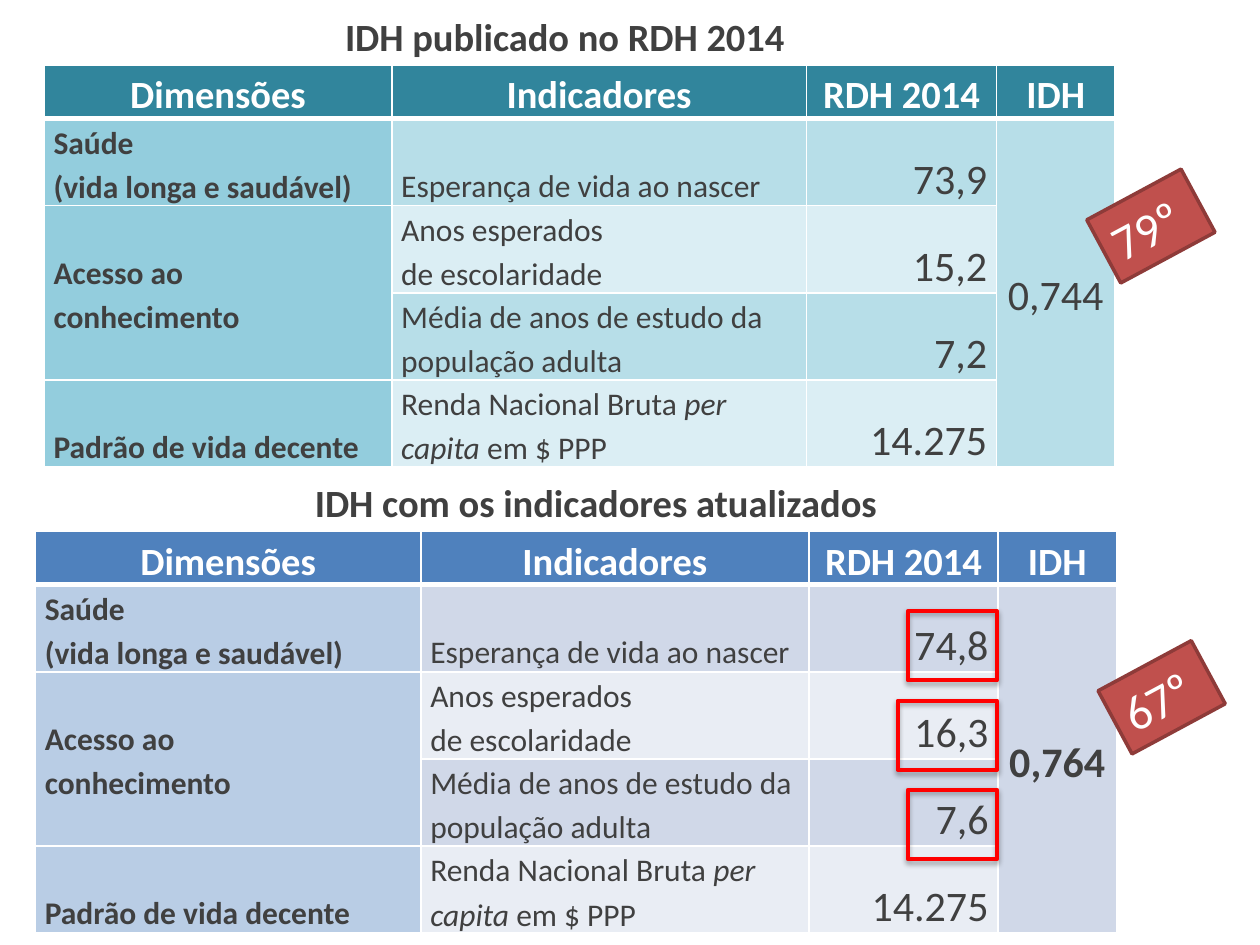
"""Build the slide comparing the published and the updated HDI tables."""
from lxml import etree
from pptx import Presentation
from pptx.dml.color import RGBColor
from pptx.enum import shapes, text
from pptx.oxml import ns
from pptx.util import Pt

WHITE = RGBColor(0xFF, 0xFF, 0xFF)
GREY = RGBColor(0x40, 0x40, 0x40)
RED = RGBColor(0xFF, 0x00, 0x00)
BRICK = RGBColor(0xC0, 0x50, 0x4D)
BRICK_DARK = RGBColor(0x8E, 0x3B, 0x39)
BLUES = [RGBColor.from_string(c) for c in ("4F81BD", "B9CDE5", "D0D8E8", "E9EDF4")]
TEALS = [RGBColor.from_string(c) for c in ("31859C", "93CDDD", "B7DEE8", "DBEEF4")]

FONT = "Calibri"
LEFT, CENTER, RIGHT = (text.PP_ALIGN.LEFT, text.PP_ALIGN.CENTER, text.PP_ALIGN.RIGHT)
HEADERS = ["Dimensões", "Indicadores", "RDH 2014", "IDH"]
DIMENSIONS = [
    ["Saúde", "(vida longa e saudável)"],
    ["Acesso ao", "conhecimento"],
    [],
    ["Padrão de vida decente"],
]
INDICATORS = [
    ["Esperança de vida ao nascer"],
    ["Anos esperados", "de escolaridade"],
    ["Média de anos de estudo da população adulta"],
    [("Renda Nacional Bruta ", "per capita ", "em $ PPP")],
]
TABLES = [
    dict(left=20.2, top=303.8, widths=(220.3, 221.8, 108, 67.7), colors=BLUES,
         values=("74,8", "16,3", "7,6", "14.275"), index="0,764", index_bold=True),
    dict(left=25.2, top=37.4, widths=(198.7, 236.9, 108.7, 67.7), colors=TEALS,
         values=("73,9", "15,2", "7,2", "14.275"), index="0,744", index_bold=False),
]
HEADER_HEIGHT, ROW_HEIGHT = 29.8, 49.8
TITLES = [
    ("IDH publicado no RDH 2014", 190.1, 3.6, 266.4, 33.8),
    ("IDH com os indicadores atualizados", 172.8, 270, 351.4, 33.8),
]
BADGES = [("67º", 633.6, 378, 60.5, 41), ("79º", 627.1, 108.7, 61.2, 41)]
BADGE_ANGLE = 331.7
FRAME_RIGHT, FRAME_HEIGHT = 569.8, 39.6
FRAMES = [(349.2, 51.1), (400.3, 56.9), (451.4, 51.1)]


def add_span(para, words, size, color, bold=False, italic=False):
    span = para.add_run()
    span.text = words
    font = span.font
    font.name, font.size, font.bold, font.italic = FONT, Pt(size), bold, italic
    font.color.rgb = color


def add_box(page, left, top, width, height, fill, line, weight):
    box = page.shapes.add_shape(
        shapes.MSO_SHAPE.RECTANGLE, Pt(left), Pt(top), Pt(width), Pt(height))
    box.shadow.inherit = False
    if fill is None:
        box.fill.background()
    else:
        box.fill.solid()
        box.fill.fore_color.rgb = fill
    box.line.color.rgb = line
    box.line.width = Pt(weight)
    return box


def add_label(box, words, size, color, bold=False):
    frame = box.text_frame
    frame.word_wrap = False
    frame.auto_size = text.MSO_AUTO_SIZE.SHAPE_TO_FIT_TEXT
    para = frame.paragraphs[0]
    para.alignment = LEFT
    add_span(para, words, size, color, bold)


def add_shadow(box):
    effects = box._element.spPr.find(ns.qn("a:effectLst"))
    shadow = etree.SubElement(
        effects, ns.qn("a:outerShdw"), blurRad=str(Pt(3.1)), dist=str(Pt(1.8)),
        dir="5400000", rotWithShape="0")
    color = etree.SubElement(shadow, ns.qn("a:srgbClr"), val="000000")
    etree.SubElement(color, ns.qn("a:alpha"), val="35000")


def style_cell(cell, fill, top, bottom):
    properties = cell._tc.get_or_add_tcPr()
    for side, weight in zip("LRTB", (1, 1, top, bottom)):
        line = etree.SubElement(properties, ns.qn(f"a:ln{side}"), w=str(Pt(weight)))
        solid = etree.SubElement(line, ns.qn("a:solidFill"))
        etree.SubElement(solid, ns.qn("a:srgbClr"), val=str(WHITE))
    cell.fill.solid()
    cell.fill.fore_color.rgb = fill
    cell.margin_left = cell.margin_right = Pt(5.4)
    cell.margin_top = cell.margin_bottom = 0


def write_cell(cell, lines, size, color=GREY, bold=False, align=LEFT,
               anchor=text.MSO_ANCHOR.BOTTOM):
    cell.vertical_anchor = anchor
    frame = cell.text_frame
    for number, line in enumerate(lines):
        para = frame.add_paragraph() if number else frame.paragraphs[0]
        para.alignment = align
        para.line_spacing = 1.15
        spans = (line,) if isinstance(line, str) else line
        for position, words in enumerate(spans):
            add_span(para, words, size, color, bold, italic=position == 1)


def add_index_table(page, left, top, widths, colors, values, index, index_bold):
    head, side, dark, light = colors
    heights = [HEADER_HEIGHT] + [ROW_HEIGHT] * len(values)
    table = page.shapes.add_table(
        len(heights), len(widths), Pt(left), Pt(top), Pt(sum(widths)), Pt(sum(heights))).table
    for column, width in zip(table.columns, widths):
        column.width = Pt(width)
    for row, height in zip(table.rows, heights):
        row.height = Pt(height)

    for column, words in enumerate(HEADERS):
        cell = table.cell(0, column)
        style_cell(cell, head, 1, 3)
        write_cell(cell, [words], 22, WHITE, True, CENTER)

    middle = text.MSO_ANCHOR.MIDDLE
    for row, (dimension, indicator, value) in enumerate(
            zip(DIMENSIONS, INDICATORS, values), start=1):
        band = dark if row % 2 else light
        for column, fill in enumerate((side, band, band, dark)):
            style_cell(table.cell(row, column), fill, 3 if row == 1 else 1, 1)
        anchor = middle if row == 2 else text.MSO_ANCHOR.BOTTOM
        write_cell(table.cell(row, 0), dimension, 18, bold=True, anchor=anchor)
        write_cell(table.cell(row, 1), indicator, 18)
        write_cell(table.cell(row, 2), [value], 24, align=RIGHT)
    write_cell(table.cell(1, 3), [index], 24, bold=index_bold, align=CENTER, anchor=middle)
    table.cell(1, 3).merge(table.cell(4, 3))
    table.cell(2, 0).merge(table.cell(3, 0))


def main():
    deck = Presentation()
    deck.slide_width, deck.slide_height = Pt(720), Pt(540)
    page = deck.slides.add_slide(deck.slide_layouts[6])
    for words, *place in TITLES:
        add_label(add_box(page, *place, WHITE, WHITE, 2), words, 22, GREY, True)
    for content in TABLES:
        add_index_table(page, **content)
    for words, *place in BADGES:
        badge = add_box(page, *place, BRICK, BRICK_DARK, 2)
        badge.rotation = BADGE_ANGLE
        add_label(badge, words, 28, WHITE)
    for top, width in FRAMES:
        add_shadow(add_box(
            page, FRAME_RIGHT - width, top, width, FRAME_HEIGHT, None, RED, 2.25))
    deck.save("out.pptx")


if __name__ == "__main__":
    main()
